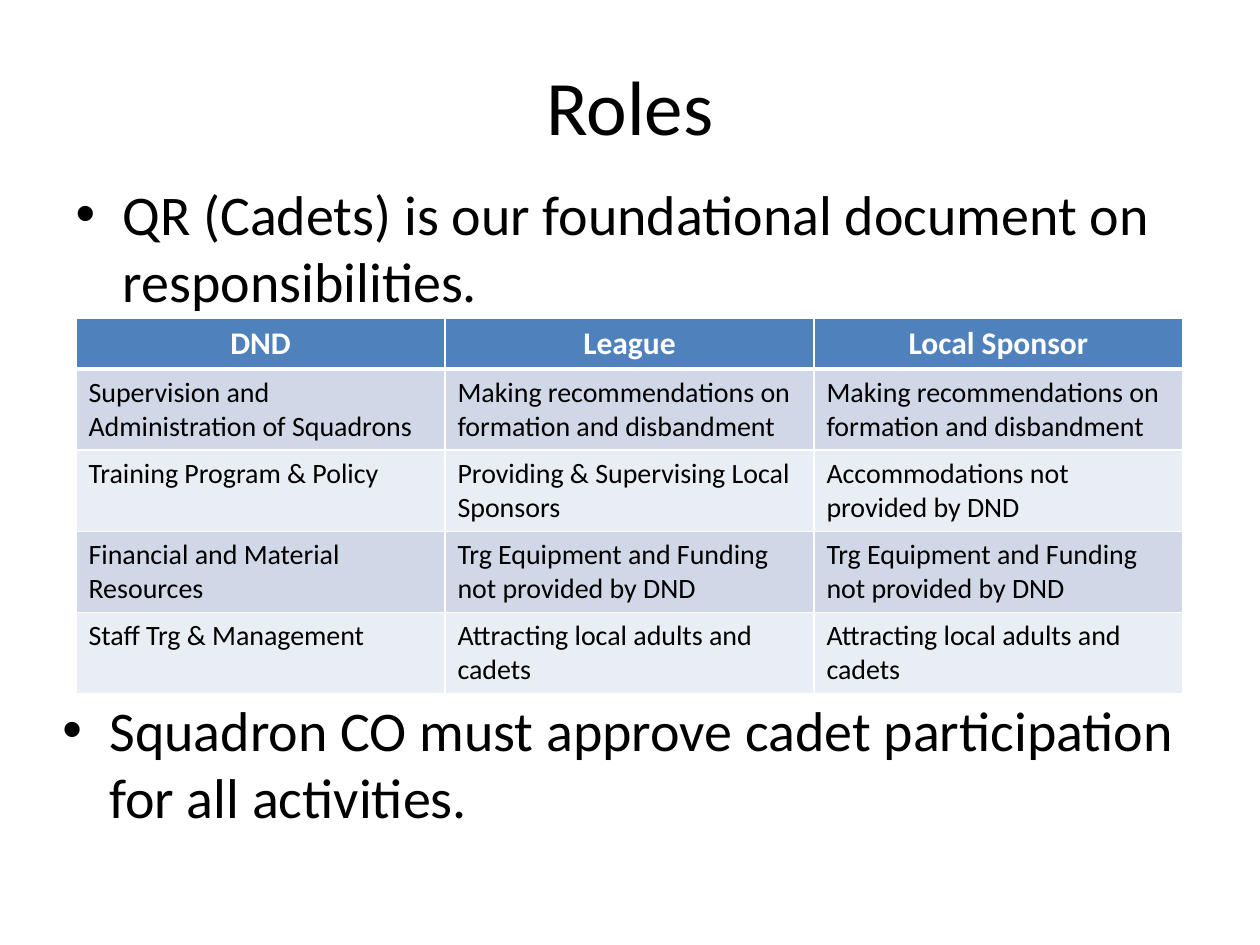
from dataclasses import dataclass

from lxml import etree
from pptx import Presentation
from pptx.dml.color import RGBColor
from pptx.enum.text import MSO_ANCHOR, MSO_AUTO_SIZE, PP_ALIGN
from pptx.oxml.ns import qn
from pptx.util import Emu, Pt

CENTER, LEFT = PP_ALIGN.CENTER, PP_ALIGN.LEFT
MIDDLE, TOP = MSO_ANCHOR.MIDDLE, MSO_ANCHOR.TOP
NO_AUTOFIT = MSO_AUTO_SIZE.NONE
PX = 914400 / 126


@dataclass(frozen=True)
class Theme:
    """Colours, font and type sizes of the slide."""
    font: str = "Calibri"
    ink: str = "000000"
    paper: str = "FFFFFF"
    header: str = "4F81BD"
    bands: tuple = ("D0D8E8", "E9EDF4")
    title_size: int = 44
    bullet_size: int = 32
    header_size: int = 18
    cell_size: int = 16


def emu(px):
    """Turn pixels into EMU."""
    return Emu(round(px * PX))


class SlideBuilder:
    """Draws styled elements on the current slide."""

    def __init__(self, page, theme):
        """Keep the page and its theme."""
        self.page = page
        self.theme = theme

    def place(self, box, left, top, width, height):
        """Move and size a box."""
        box.left, box.top = emu(left), emu(top)
        box.width, box.height = emu(width), emu(height)

    def set_text(self, frame, text, size, color, align=LEFT, bold=False):
        """Set the only paragraph of a frame and return it."""
        frame.text = text
        frame.word_wrap = True
        para = frame.paragraphs[0]
        para.alignment = align
        para.space_before = Pt(0)
        for span in para.runs:
            span.font.name = self.theme.font
            span.font.size = Pt(size)
            span.font.bold = bold
            span.font.color.rgb = RGBColor.from_string(color)
        return para

    def title(self, text, *area):
        """Fill the title placeholder."""
        box = self.page.shapes.title
        self.place(box, *area)
        self.set_text(box.text_frame, text, self.theme.title_size, self.theme.ink, CENTER)
        box.text_frame.auto_size = NO_AUTOFIT
        box.text_frame.vertical_anchor = MIDDLE

    def bullet(self, box, text, *area):
        """Put one bulleted paragraph in a box."""
        self.place(box, *area)
        para = self.set_text(box.text_frame, text, self.theme.bullet_size, self.theme.ink)
        box.text_frame.auto_size = NO_AUTOFIT
        box.text_frame.vertical_anchor = TOP
        properties = para._p.get_or_add_pPr()
        properties.set("marL", str(emu(47)))
        properties.set("indent", str(emu(-47)))
        etree.SubElement(properties, qn("a:buFont"), typeface="Arial")
        etree.SubElement(properties, qn("a:buChar"), char="•")

    def body(self, text, *area):
        """Fill the body placeholder with a bullet."""
        self.bullet(self.page.placeholders[1], text, *area)

    def bullet_box(self, text, *area):
        """Add a text box with a bullet."""
        self.bullet(self.page.shapes.add_textbox(0, 0, 0, 0), text, *area)

    def borders(self, cell, bottom):
        """Draw the four borders of a cell."""
        properties = cell._tc.get_or_add_tcPr()
        widths = {"a:lnL": 1, "a:lnR": 1, "a:lnT": 1, "a:lnB": bottom}
        for index, (side, width) in enumerate(widths.items()):
            line = etree.Element(qn(side), w=str(Pt(width)))
            fill = etree.SubElement(line, qn("a:solidFill"))
            etree.SubElement(fill, qn("a:srgbClr"), val=self.theme.paper)
            properties.insert(index, line)

    def table(self, rows, left, top, column_width, header_height, row_height):
        """Add a table with a header row and banded rows."""
        theme = self.theme
        count = len(rows[0])
        height = header_height + row_height * (len(rows) - 1)
        table = self.page.shapes.add_table(
            len(rows), count, emu(left), emu(top), emu(column_width * count), emu(height)
        ).table
        for column in table.columns:
            column.width = emu(column_width)
        for index, texts in enumerate(rows):
            is_header = index == 0
            table.rows[index].height = emu(header_height if is_header else row_height)
            color = theme.header if is_header else theme.bands[(index - 1) % 2]
            for cell, text in zip(table.rows[index].cells, texts):
                cell.fill.solid()
                cell.fill.fore_color.rgb = RGBColor.from_string(color)
                self.borders(cell, 3 if is_header else 1)
                if is_header:
                    self.set_text(cell.text_frame, text, theme.header_size, theme.paper,
                                  CENTER, True)
                else:
                    self.set_text(cell.text_frame, text, theme.cell_size, theme.ink)


def main():
    """Build the roles slide."""
    formation = "Making recommendations on formation and disbandment"
    equipment = "Trg Equipment and Funding not provided by DND"
    recruiting = "Attracting local adults and cadets"
    roles = [
        ("DND", "League", "Local Sponsor"),
        ("Supervision and Administration of Squadrons", formation, formation),
        ("Training Program & Policy", "Providing & Supervising Local Sponsors",
         "Accommodations not provided by DND"),
        ("Financial and Material Resources", equipment, equipment),
        ("Staff Trg & Management", recruiting, recruiting),
    ]
    deck = Presentation()
    deck.slide_width, deck.slide_height = emu(1260), emu(945)
    slide = SlideBuilder(deck.slides.add_slide(deck.slide_layouts[1]), Theme())
    slide.title("Roles", 63, 15, 1134, 180)
    slide.body("QR (Cadets) is our foundational document on responsibilities.",
               63, 173, 1134, 142)
    slide.table(roles, 76, 318, 369, 51, 81)
    slide.bullet_box("Squadron CO must approve cadet participation for all activities.",
                     50, 689, 1147, 142)
    deck.save("out.pptx")


if __name__ == "__main__":
    main()
